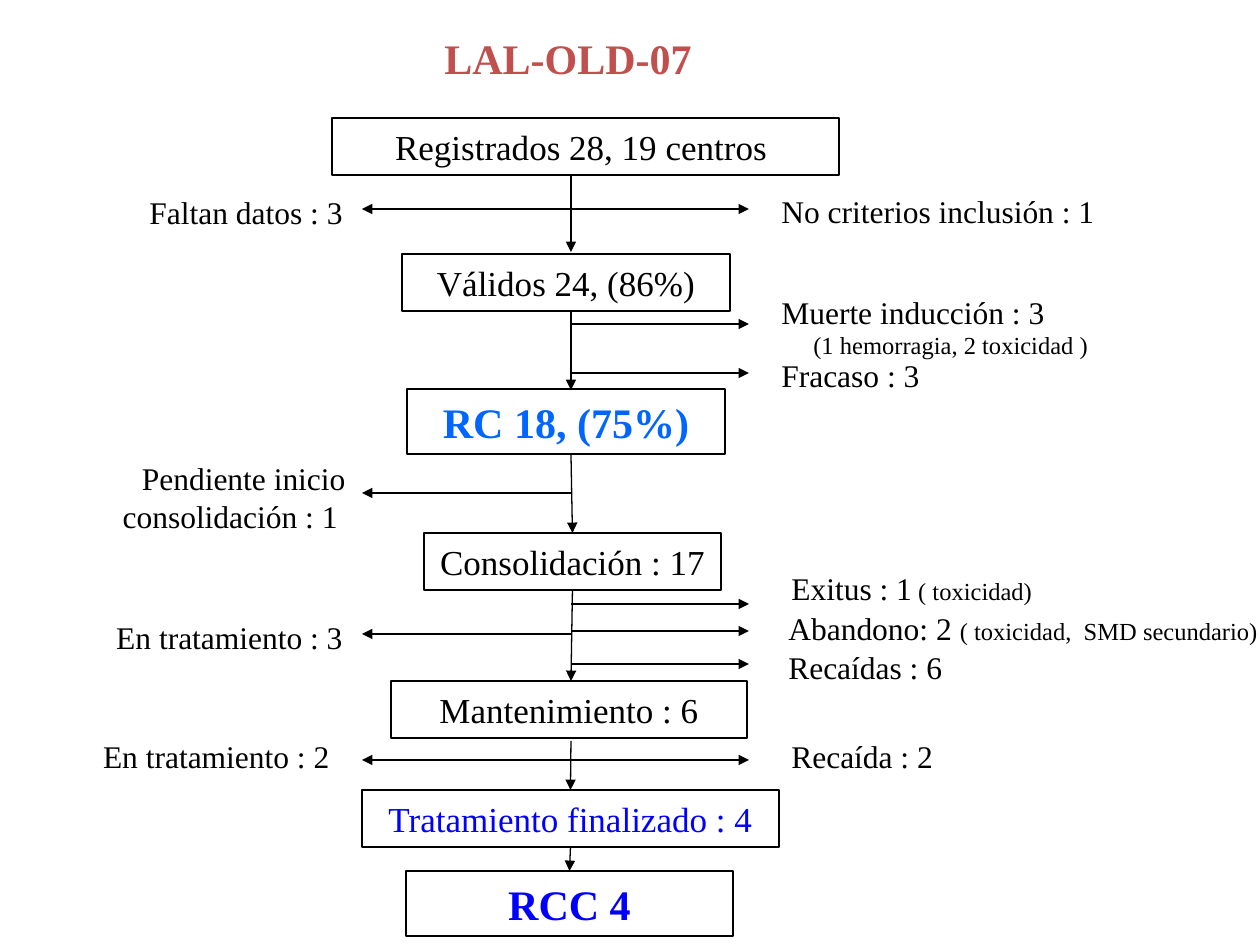
"""Build the LAL-OLD-07 patient flow chart slide."""
from lxml import etree
from pptx import Presentation, util as u
from pptx.dml.color import RGBColor
from pptx.enum import shapes, text
from pptx.oxml.ns import qn

SCALE = 914400 / 126
FONT = "Times New Roman"
COLORS = {"black": "000000", "red": "C0504D", "azure": "0066FF", "blue": "0000FF"}
AXIS, LEFT_TIP, RIGHT_TIP = 571, 362, 749
LEFT, CENTER, RIGHT = text.PP_ALIGN.LEFT, text.PP_ALIGN.CENTER, text.PP_ALIGN.RIGHT

TITLE = ("LAL-OLD-07", (432, 26, 328, 63))

STAGES = [
    ("Registrados 28, 19 centros ", (332, 118, 507, 57), 20, "black", False),
    ("Válidos 24, (86%)", (402, 254, 328, 57), 20, "black", False),
    ("RC 18, (75%)", (407, 389, 318, 65), 24, "azure", True),
    ("Consolidación : 17", (424, 533, 297, 57), 20, "black", False),
    ("Mantenimiento : 6", (391, 681, 356, 57), 20, "black", False),
    ("Tratamiento finalizado : 4", (362, 790, 417, 57), 20, "blue", False),
    ("RCC 4", (406, 871, 327, 65), 24, "blue", True),
]
FLOWS = [(175, 252), (311, 390), (454, 533), (591, 681), (741, 790), (849, 869)]

LEFT_ARROWS = [209, 493, 634, 760]
RIGHT_ARROWS = [209, 324, 373, 604, 631, 664, 760]

NOTES = [
    ((5, 187, 358, 50), RIGHT, 1, [[("Faltan datos : 3 ", 18)]]),
    ((0, 453, 358, 88), RIGHT, 1, [[("Pendiente inicio consolidación : 1 ", 18)]]),
    ((5, 612, 358, 50), RIGHT, 1, [[("En tratamiento : 3 ", 18)]]),
    ((-25, 741, 367, 39), RIGHT, 0.7, [[("En tratamiento : 2", 18)]]),
    ((769, 196, 471, 39), LEFT, 0.7, [[("No criterios inclusión : 1", 18)]]),
    ((769, 297, 466, 103), LEFT, 0.7, [
        [("Muerte inducción : 3", 18)],
        [("(1 hemorragia, 2 toxicidad )", 14)],
        [("Fracaso : 3", 18)],
    ]),
    ((779, 573, 444, 39), LEFT, 0.7, [[("Exitus : 1", 18), (" ( toxicidad)", 14)]]),
    ((776, 603, 507, 50), LEFT, 1,
     [[("Abandono: 2 ", 18), ("( toxicidad,  SMD secundario)", 14)]]),
    ((776, 652, 444, 39), LEFT, 0.7, [[("Recaídas : 6", 18)]]),
    ((779, 741, 444, 39), LEFT, 0.7, [[("Recaída : 2", 18)]]),
]
DETAIL_INDENT, DETAIL_GAP, NEXT_GAP = 32, 5, 4


def px(value):
    return u.Emu(round(value * SCALE))


def color(name):
    return RGBColor.from_string(COLORS[name])


def style_run(run, size, color_name="black", bold=False):
    run.font.name = FONT
    run.font.size = u.Pt(size)
    run.font.bold = bold
    run.font.color.rgb = color(color_name)


def fit_frame(shape):
    frame = shape.text_frame
    frame.word_wrap = True
    frame.auto_size = text.MSO_AUTO_SIZE.SHAPE_TO_FIT_TEXT
    return frame


def add_single(shape, words, alignment, size, color_name, bold):
    frame = fit_frame(shape)
    frame.text = words
    frame.paragraphs[0].alignment = alignment
    style_run(frame.paragraphs[0].runs[0], size, color_name, bold)


def add_stage(slide, words, place, size, color_name, bold):
    shape = slide.shapes.add_shape(shapes.MSO_SHAPE.RECTANGLE, *map(px, place))
    shape.shadow.inherit = False
    shape.fill.background()
    shape.line.color.rgb = color("black")
    shape.line.width = u.Pt(1)
    add_single(shape, words, CENTER, size, color_name, bold)
    return shape


def add_note(slide, place, alignment, spacing, lines):
    frame = fit_frame(slide.shapes.add_textbox(*map(px, place)))
    for index, parts in enumerate(lines):
        paragraph = frame.add_paragraph() if index else frame.paragraphs[0]
        paragraph.alignment = alignment
        paragraph.line_spacing = spacing
        if index:
            is_detail = parts[0][1] < 18
            paragraph.space_before = u.Pt(DETAIL_GAP if is_detail else NEXT_GAP)
            if is_detail:
                paragraph._p.get_or_add_pPr().set("marL", str(px(DETAIL_INDENT)))
        for words, size in parts:
            run = paragraph.add_run()
            run.text = words
            style_run(run, size)


def add_arrow(slide, x1, y1, x2, y2):
    arrow = slide.shapes.add_connector(
        shapes.MSO_CONNECTOR.STRAIGHT, *map(px, (x1, y1, x2, y2)))
    arrow.line.color.rgb = color("black")
    arrow.line.width = u.Pt(0.75)
    etree.SubElement(arrow.line._get_or_add_ln(), qn("a:tailEnd"), type="triangle")
    etree.SubElement(arrow._element.spPr, qn("a:effectLst"))
    return arrow


def on_axis(shape):
    return abs(shape.left + shape.width / 2 - px(AXIS)) <= px(2)


def main():
    presentation = Presentation()
    presentation.slide_width, presentation.slide_height = px(1260), px(945)
    slide = presentation.slides.add_slide(presentation.slide_layouts[6])

    title, place = TITLE
    add_single(slide.shapes.add_textbox(*map(px, place)), title, LEFT, 24, "red", True)
    stages = [add_stage(slide, *stage) for stage in STAGES]
    for note in NOTES:
        add_note(slide, *note)

    for (top, bottom), upper, lower in zip(FLOWS, stages, stages[1:]):
        arrow = add_arrow(slide, AXIS, top, AXIS, bottom)
        if on_axis(upper):
            arrow.begin_connect(upper, 2)
        if on_axis(lower):
            arrow.end_connect(lower, 0)
    for tip, levels in ((LEFT_TIP, LEFT_ARROWS), (RIGHT_TIP, RIGHT_ARROWS)):
        for y in levels:
            add_arrow(slide, AXIS, y, tip, y)

    presentation.save("out.pptx")


if __name__ == "__main__":
    main()
